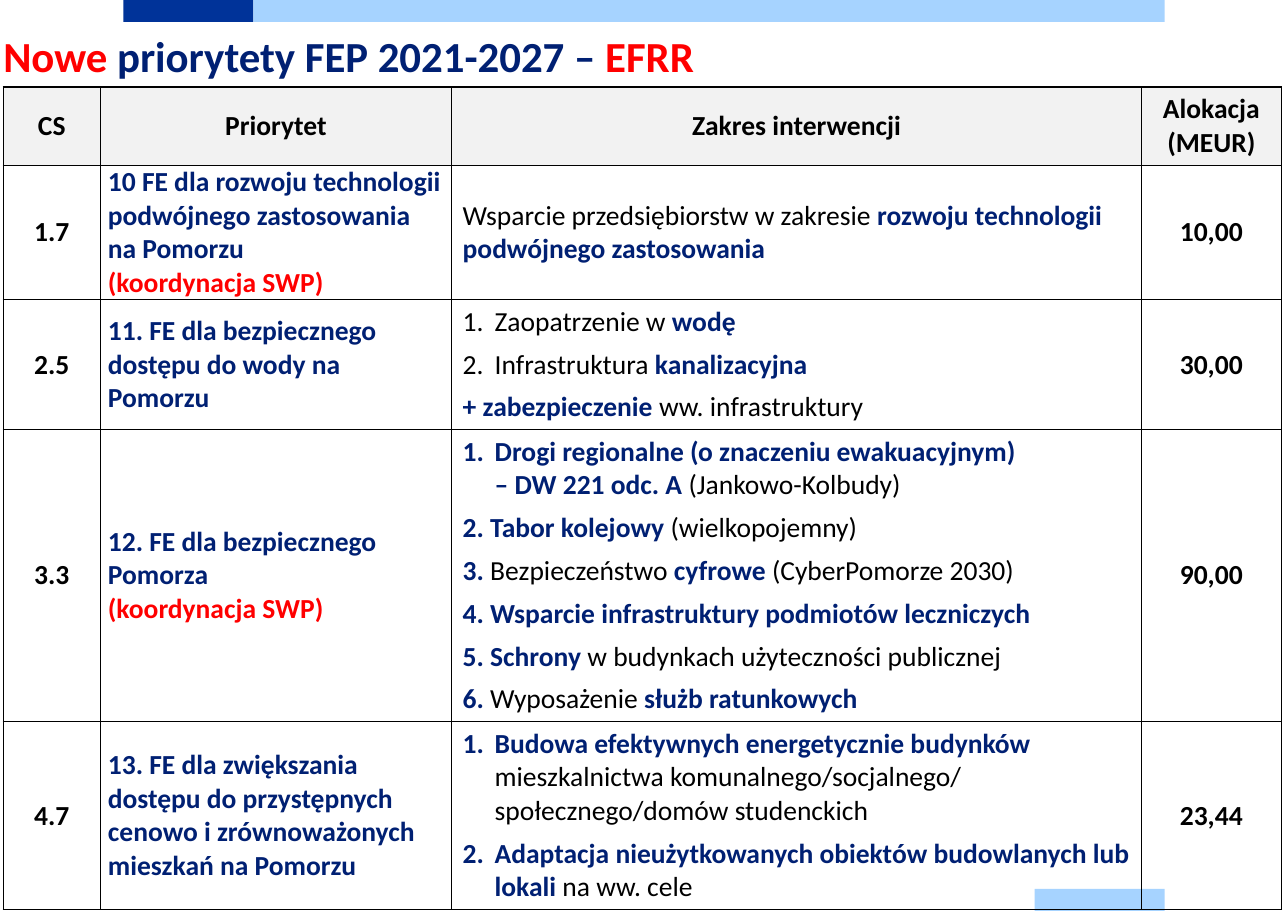
from lxml import etree
from pptx import Presentation
from pptx.dml.color import RGBColor
from pptx.enum.shapes import MSO_SHAPE
from pptx.enum.text import MSO_ANCHOR, PP_ALIGN
from pptx.oxml import parse_xml
from pptx.oxml.ns import qn
from pptx.util import Inches, Pt

RECT = MSO_SHAPE.RECTANGLE
MIDDLE = MSO_ANCHOR.MIDDLE
LEFT, CENTER = PP_ALIGN.LEFT, PP_ALIGN.CENTER
NS = "http://schemas.openxmlformats.org/drawingml/2006/main"
BLACK, NAVY, RED = "000000", "002073", "FF0000"
BLUE, SKY, GREY = "003399", "A6D3FF", "F2F2F2"
WIDE, HIGH = 11.69, 8.27
COLS = [0.88, 3.19, 6.26, 1.27]
HEIGHTS = [0.71, 1.22, 1.18, 2.65, 1.71]
HEADS = ["CS", "Priorytet", "Zakres interwencji", "Alokacja\n(MEUR)"]


def color(code):
    """Turn a hex string into a colour."""
    return RGBColor.from_string(code)


def plain(text):
    """Return a regular black run."""
    return text, BLACK, False


def bold(text, tint=NAVY):
    """Return a bold run."""
    return text, tint, True


ROWS = [
    ("1.7",
     [bold("10 FE dla rozwoju technologii podwójnego zastosowania na Pomorzu\n"),
      bold("(koordynacja SWP)", RED)],
     [(False, [plain("Wsparcie przedsiębiorstw w zakresie "),
               bold("rozwoju technologii podwójnego zastosowania")])],
     "10,00"),
    ("2.5",
     [bold("11. FE dla bezpiecznego dostępu do wody na Pomorzu")],
     [(True, [plain("Zaopatrzenie w "), bold("wodę")]),
      (True, [plain("Infrastruktura "), bold("kanalizacyjna")]),
      (False, [bold("+ zabezpieczenie "), plain("ww. infrastruktury")])],
     "30,00"),
    ("3.3",
     [bold("12. FE dla bezpiecznego Pomorza\n"),
      bold("(koordynacja SWP)", RED)],
     [(True, [bold("Drogi regionalne (o znaczeniu ewakuacyjnym)\n– DW 221 odc. A "),
              plain("(Jankowo-Kolbudy)")]),
      (False, [bold("2. Tabor kolejowy "), plain("(wielkopojemny)")]),
      (False, [bold("3. "), plain("Bezpieczeństwo "), bold("cyfrowe "),
               plain("(CyberPomorze 2030)")]),
      (False, [bold("4. Wsparcie infrastruktury podmiotów leczniczych")]),
      (False, [bold("5. Schrony"), plain(" w budynkach użyteczności publicznej")]),
      (False, [bold("6. "), plain("Wyposażenie "), bold("służb ratunkowych")])],
     "90,00"),
    ("4.7",
     [bold("13. FE dla zwiększania dostępu do przystępnych cenowo "
           "i zrównoważonych mieszkań na Pomorzu")],
     [(True, [bold("Budowa efektywnych energetycznie budynków "),
              plain("mieszkalnictwa komunalnego/socjalnego/ "
                    "społecznego/domów studenckich")]),
      (True, [bold("Adaptacja nieużytkowanych obiektów budowlanych lub lokali "),
              plain("na ww. cele")])],
     "23,44"),
]


def write(para, runs, size=18, align=LEFT, before=0, line=None, number=False):
    """Fill a paragraph with formatted runs."""
    para.alignment = align
    para.space_before = Pt(before)
    if line:
        para.line_spacing = Pt(line)
    if number:
        props = para._p.get_or_add_pPr()
        props.set("marL", str(Inches(0.29)))
        props.set("indent", str(Inches(-0.29)))
        etree.SubElement(props, qn("a:buAutoNum"), type="arabicPeriod")
    for text, tint, heavy in runs:
        for i, part in enumerate(text.split("\n")):
            if i:
                para.add_line_break()
            if part:
                run = para.add_run()
                run.text = part
                run.font.name = "Calibri"
                run.font.size = Pt(size)
                run.font.bold = heavy
                run.font.color.rgb = color(tint)


def bar(slide, left, top, width, tint):
    """Draw one plain colour bar."""
    shape = slide.shapes.add_shape(
        RECT, Inches(left), Inches(top), Inches(width), Inches(0.2))
    shape.shadow.inherit = False
    shape.fill.solid()
    shape.fill.fore_color.rgb = color(tint)
    shape.line.fill.background()


def bars(slide, left, top, width, height):
    """Place the colour bars at the top and bottom of the page."""
    short = 1.18
    bar(slide, left, top, short, BLUE)
    bar(slide, left + short, top, width - short, SKY)
    bar(slide, left + width - short, top + height - 0.2, short, SKY)


def title(slide, left, top, width, height):
    """Place the slide title."""
    box = slide.shapes.add_textbox(
        Inches(left), Inches(top), Inches(width), Inches(height))
    frame = box.text_frame
    frame.word_wrap = True
    frame.vertical_anchor = MIDDLE
    frame.margin_left = frame.margin_right = 0
    frame.margin_top = frame.margin_bottom = 0
    runs = [bold("Nowe", RED), bold(" priorytety FEP 2021-2027 – "),
            bold("EFRR", RED)]
    write(frame.paragraphs[0], runs, size=28, line=36)


def style(cell, fill=None, tight=False):
    """Set borders, fill and margins of a cell."""
    props = cell._tc.get_or_add_tcPr()
    for side in "LRTB":
        props.append(parse_xml(
            f'<a:ln{side} xmlns:a="{NS}" w="{Pt(1)}"><a:solidFill>'
            f'<a:srgbClr val="{BLACK}"/></a:solidFill></a:ln{side}>'))
    if fill:
        cell.fill.solid()
        cell.fill.fore_color.rgb = color(fill)
    else:
        cell.fill.background()
    cell.vertical_anchor = MIDDLE
    if tight:
        cell.margin_left = cell.margin_right = Inches(0.07)
        cell.margin_top = cell.margin_bottom = 0


def grid(slide, left, top, width, height):
    """Place the table of priorities."""
    table = slide.shapes.add_table(
        len(HEIGHTS), len(COLS), Inches(left), Inches(top),
        Inches(width), Inches(height)).table
    table.first_row = table.horz_banding = False
    for col, size in zip(table.columns, COLS):
        col.width = Inches(size)
    for row, size in zip(table.rows, HEIGHTS):
        row.height = Inches(size)
    for cell, text in zip(table.rows[0].cells, HEADS):
        style(cell, fill=GREY)
        write(cell.text_frame.paragraphs[0], [bold(text, BLACK)], align=CENTER)
    for r, (code, name, scope, sum_) in enumerate(ROWS, 1):
        mid = [bold(code, BLACK)], name, None, [bold(sum_, BLACK)]
        for c, runs in enumerate(mid):
            cell = table.cell(r, c)
            style(cell, tight=c != 2)
            frame = cell.text_frame
            if runs:
                write(frame.paragraphs[0], runs, align=LEFT if c == 1 else CENTER)
                continue
            for i, (number, parts) in enumerate(scope):
                para = frame.add_paragraph() if i else frame.paragraphs[0]
                write(para, parts, before=6 if i else 0, number=number)


def main():
    """Build and save the slide."""
    deck = Presentation()
    deck.slide_width, deck.slide_height = Inches(WIDE), Inches(HIGH)
    slide = deck.slides.add_slide(deck.slide_layouts[6])
    bars(slide, 1.12, 0, 9.45, HIGH)
    title(slide, 0.03, 0.19, 11.6, 0.6)
    grid(slide, 0.03, 0.79, sum(COLS), sum(HEIGHTS))
    deck.save("out.pptx")


if __name__ == "__main__":
    main()
